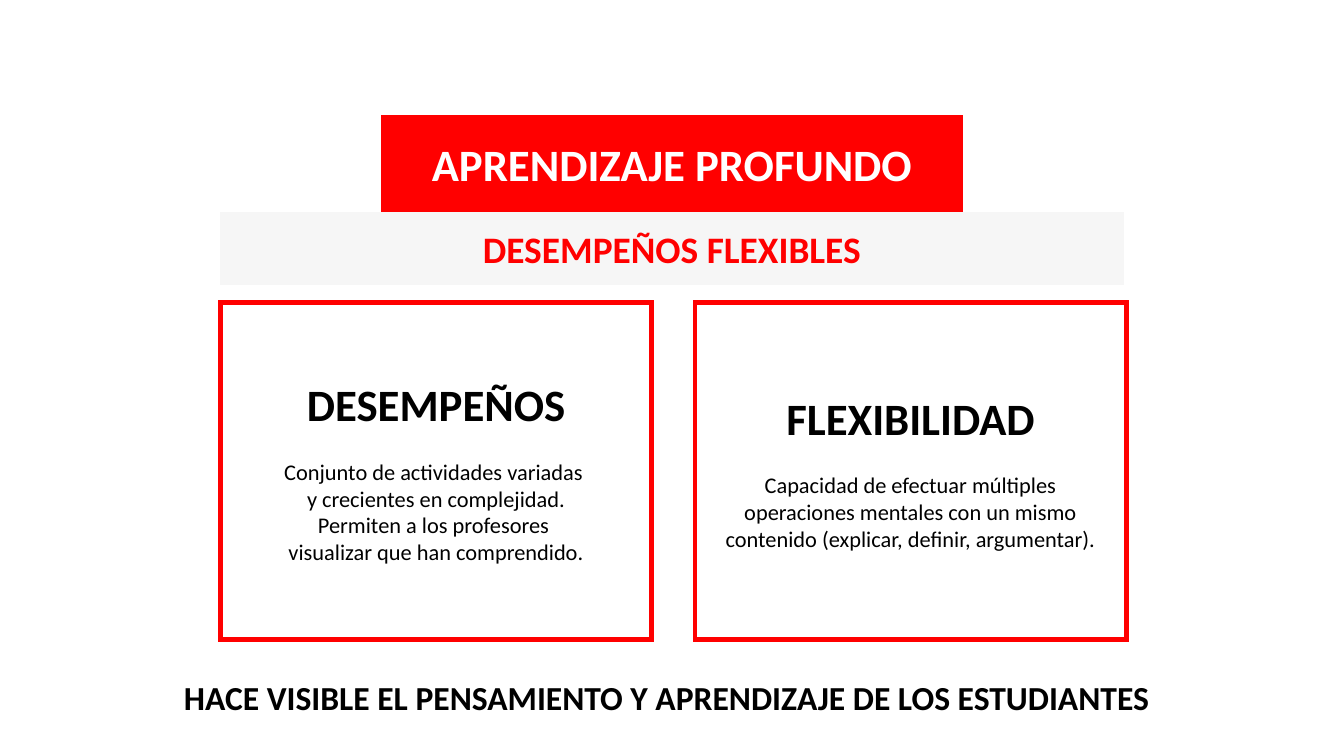
from dataclasses import dataclass

from lxml.etree import SubElement
from pptx import Presentation
from pptx.dml.color import RGBColor
from pptx.enum.shapes import MSO_SHAPE as Shape
from pptx.enum.text import MSO_ANCHOR as Anchor, MSO_AUTO_SIZE as AutoSize, PP_ALIGN as Align
from pptx.oxml.ns import qn
from pptx.util import Inches, Pt


@dataclass(frozen=True)
class Theme:
    font: str = "Calibri"
    red: str = "FF0000"
    gray: str = "F6F6F6"
    white: str = "FFFFFF"
    black: str = "000000"
    heading: int = 24
    subtitle: int = 20
    closing: int = 18
    body: int = 12
    heading_gap: float = 14.6
    thin: float = 0.5
    thick: float = 2.5


THEME = Theme()
TITLE = "APRENDIZAJE PROFUNDO"
SUBTITLE = "DESEMPEÑOS FLEXIBLES"
CARDS = [
    ("DESEMPEÑOS", [
        "Conjunto de actividades variadas ",
        "y crecientes en complejidad.",
        "Permiten a los profesores ",
        "visualizar que han comprendido.",
    ]),
    ("FLEXIBILIDAD", [
        "Capacidad de efectuar múltiples operaciones mentales con un mismo "
        "contenido (explicar, definir, argumentar).",
    ]),
]
CLOSING = "HACE VISIBLE EL PENSAMIENTO Y APRENDIZAJE DE LOS ESTUDIANTES"

SLIDE_WIDTH = 10
SLIDE_HEIGHT = SLIDE_WIDTH * 9 / 16
TITLE_TOP, TITLE_WIDTH, TITLE_HEIGHT = 0.86, 4.32, 0.72
BAND_WIDTH, BAND_HEIGHT = 6.72, 0.54
CARD_WIDTH, CARD_HEIGHT, CARD_GAP = 3.21, 2.51, 0.32
CARD_OFFSET = 0.13
CLOSING_TOP, CLOSING_WIDTH, CLOSING_HEIGHT = 4.99, 7.46, 0.4


def centered(width):
    return (SLIDE_WIDTH - width) / 2


def place(shape, left, top, width, height):
    shape.left, shape.top = Inches(left), Inches(top)
    shape.width, shape.height = Inches(width), Inches(height)


def paint(shape, fill, line, weight):
    shape.fill.solid()
    shape.fill.fore_color.rgb = RGBColor.from_string(fill)
    shape.line.color.rgb = RGBColor.from_string(line)
    shape.line.width = Pt(weight)
    outline = shape.element.spPr.find(qn("a:ln"))
    SubElement(outline, qn("a:miter"), lim="800000")


def write(shape, lines, align=Align.CENTER, anchor=Anchor.MIDDLE):
    frame = shape.text_frame
    frame.word_wrap = True
    frame.auto_size = AutoSize.NONE
    frame.vertical_anchor = anchor
    for index, (text, size, color, bold, gap) in enumerate(lines):
        paragraph = frame.add_paragraph() if index else frame.paragraphs[0]
        paragraph.alignment = align
        paragraph.space_after = Pt(gap)
        run = paragraph.add_run()
        run.text = text
        run.font.name = THEME.font
        run.font.size = Pt(size)
        run.font.bold = bold
        run.font.color.rgb = RGBColor.from_string(color)


def add_box(slide, box, fill, line, weight, lines):
    shape = slide.shapes.add_shape(Shape.RECTANGLE, *map(Inches, box))
    shape.shadow.inherit = False
    paint(shape, fill, line, weight)
    write(shape, lines)


def main():
    presentation = Presentation()
    presentation.slide_width = Inches(SLIDE_WIDTH)
    presentation.slide_height = Inches(SLIDE_HEIGHT)
    slide = presentation.slides.add_slide(presentation.slide_layouts[5])

    title = slide.shapes.title
    place(title, centered(TITLE_WIDTH), TITLE_TOP, TITLE_WIDTH, TITLE_HEIGHT)
    paint(title, THEME.red, THEME.red, THEME.thin)
    write(title, [(TITLE, THEME.heading, THEME.white, True, 0)])

    left = centered(BAND_WIDTH)
    band_top = TITLE_TOP + TITLE_HEIGHT
    add_box(slide, (left, band_top, BAND_WIDTH, BAND_HEIGHT), THEME.gray, THEME.gray,
            THEME.thin, [(SUBTITLE, THEME.subtitle, THEME.red, True, 0)])

    card_top = band_top + BAND_HEIGHT + CARD_OFFSET
    for column, (heading, body) in enumerate(CARDS):
        card_left = left + column * (CARD_WIDTH + CARD_GAP)
        lines = [(heading, THEME.heading, THEME.black, True, THEME.heading_gap)]
        lines += [(text, THEME.body, THEME.black, False, 0) for text in body]
        add_box(slide, (card_left, card_top, CARD_WIDTH, CARD_HEIGHT), THEME.white,
                THEME.red, THEME.thick, lines)

    closing = slide.shapes.add_textbox(*map(Inches, (
        centered(CLOSING_WIDTH), CLOSING_TOP, CLOSING_WIDTH, CLOSING_HEIGHT)))
    write(closing, [(CLOSING, THEME.closing, THEME.black, True, 0)], Align.LEFT, Anchor.TOP)

    presentation.save("out.pptx")


if __name__ == "__main__":
    main()
